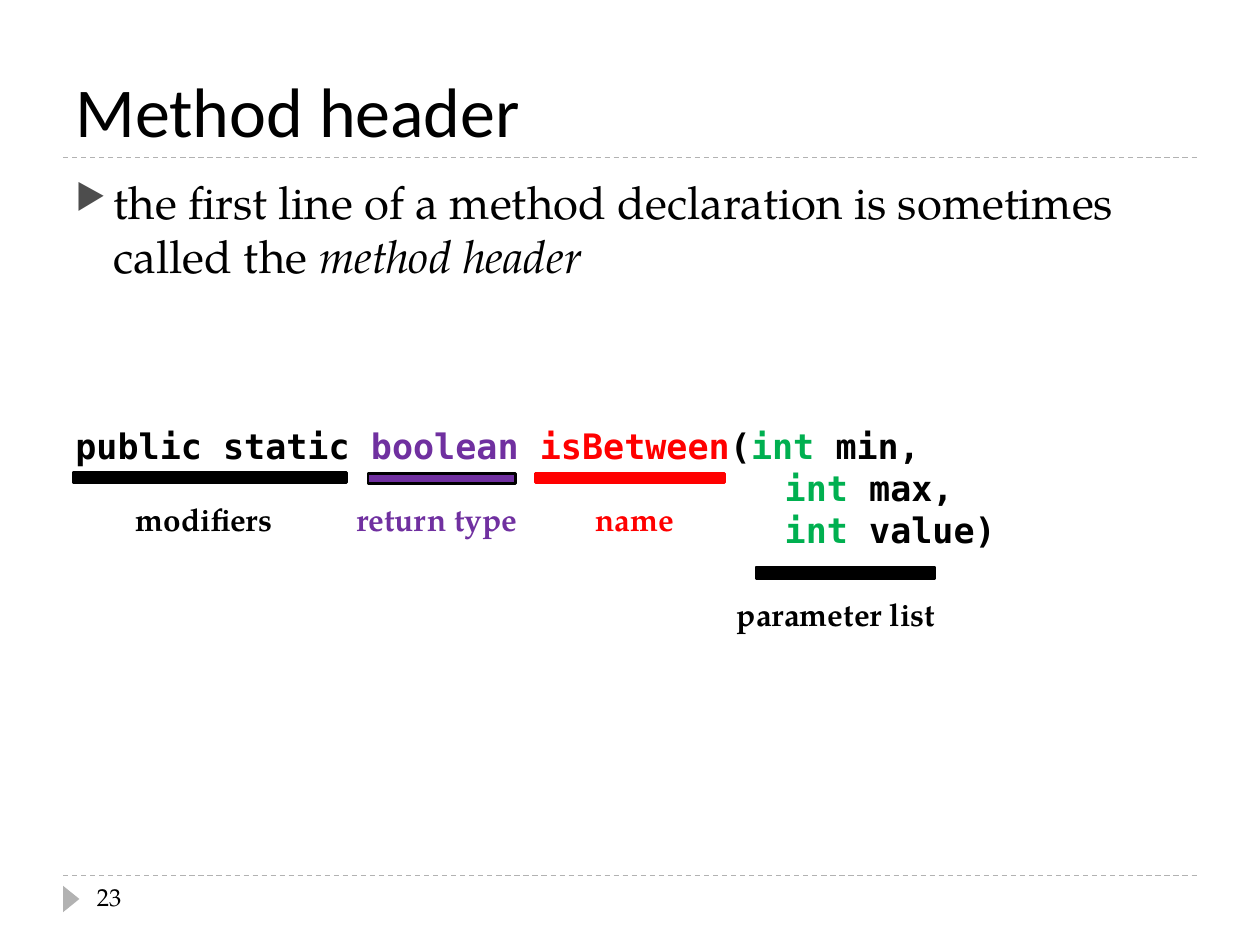
from dataclasses import dataclass

from lxml import etree
from pptx import Presentation
from pptx.dml.color import RGBColor
from pptx.enum import dml, shapes, text
from pptx.oxml import ns
from pptx.util import Inches, Pt


@dataclass(frozen=True)
class Theme:
    heading: str = "Calibri"
    body: str = "TeX Gyre Pagella"
    code: str = "DejaVu Sans Mono"
    black: str = "000000"
    purple: str = "7030A0"
    red: str = "FF0000"
    green: str = "00B050"
    rule: str = "B2B2B2"
    bullet: str = "4D4D4D"
    title_size: int = 40
    body_size: int = 26
    code_size: int = 20
    label_size: int = 18
    number_size: int = 14


THEME = Theme()


def rgb(color):
    return RGBColor.from_string(color)


def set_font(font, name, size, color=THEME.black, bold=False):
    font.name, font.size, font.bold = name, Pt(size), bold
    font.color.rgb = rgb(color)


def add_text_frame(slide, box, wrap=True):
    frame = slide.shapes.add_textbox(*map(Inches, box)).text_frame
    frame.word_wrap = wrap
    return frame


def add_line_of_text(slide, box, words, *font, wrap=True, **font_options):
    frame = add_text_frame(slide, box, wrap)
    frame.text = words
    set_font(frame.paragraphs[0].font, *font, **font_options)
    return frame


def add_block(slide, box, fill, outline=None, kind=shapes.MSO_SHAPE.RECTANGLE):
    block = slide.shapes.add_shape(kind, *map(Inches, box))
    block.shadow.inherit = False
    block.fill.solid()
    block.fill.fore_color.rgb = rgb(fill)
    if outline:
        block.line.color.rgb = rgb(outline)
        block.line.width = Pt(1.5)
    else:
        block.line.fill.background()
    return block


def add_dashed_rule(slide, left, top, width):
    rule = slide.shapes.add_connector(
        shapes.MSO_CONNECTOR.STRAIGHT,
        Inches(left), Inches(top), Inches(left + width), Inches(top))
    rule.line.color.rgb = rgb(THEME.rule)
    rule.line.width = Pt(0.75)
    rule.line.dash_style = dml.MSO_LINE.DASH
    etree.SubElement(rule._element.spPr, ns.qn("a:effectLst"))


def add_title(slide, box, words):
    left, top, width, height = box
    frame = add_line_of_text(slide, box, words, THEME.heading, THEME.title_size)
    frame.vertical_anchor = text.MSO_ANCHOR.BOTTOM
    add_dashed_rule(slide, left, top + height, width)


def set_bullet(paragraph, indent):
    properties = paragraph._p.get_or_add_pPr()
    properties.set("marL", str(Inches(indent)))
    properties.set("indent", str(-Inches(indent)))
    color = etree.SubElement(properties, ns.qn("a:buClr"))
    etree.SubElement(color, ns.qn("a:srgbClr"), val=THEME.bullet)
    etree.SubElement(properties, ns.qn("a:buSzPct"), val="76000")
    etree.SubElement(properties, ns.qn("a:buChar"), char="▶")


def add_statement(slide, box, words, term):
    """Bulleted sentence that ends in an italic term."""
    paragraph = add_text_frame(slide, box).paragraphs[0]
    paragraph.space_before = Pt(6)
    set_font(paragraph.font, THEME.body, THEME.body_size)
    set_bullet(paragraph, 0.3)
    paragraph.add_run().text = words
    emphasis = paragraph.add_run()
    emphasis.text = term
    emphasis.font.italic = True


def add_code(slide, box, lines, hanging):
    """Lines of (words, colour) runs; all but the first are indented."""
    frame = add_text_frame(slide, box)
    for number, runs in enumerate(lines):
        paragraph = frame.add_paragraph() if number else frame.paragraphs[0]
        paragraph.line_spacing = Pt(24)
        set_font(paragraph.font, THEME.code, THEME.code_size, bold=True)
        if number:
            paragraph._p.get_or_add_pPr().set("marL", str(Inches(hanging)))
        for words, color in runs:
            run = paragraph.add_run()
            run.text = words
            run.font.color.rgb = rgb(color)


def add_header_part(slide, bar, label_box, name, color, outline):
    """Coloured bar under a piece of the code, with its name below."""
    add_block(slide, bar, color, outline)
    add_line_of_text(slide, label_box, name, THEME.body, THEME.label_size,
                     color, bold=True, wrap=False)


def add_footer(slide, box, number):
    left, top, width, height = box
    add_dashed_rule(slide, left, top, width)
    marker = add_block(slide, (left - 0.04, top + 0.12, 0.21, 0.13), THEME.rule,
                       kind=shapes.MSO_SHAPE.ISOSCELES_TRIANGLE)
    marker.rotation = 90
    add_line_of_text(slide, (left + 0.17, top, 2.17, height), number,
                     THEME.body, THEME.number_size)


def add_method_header_slide(deck):
    slide = deck.slides.add_slide(deck.slide_layouts[6])
    black, purple, red, green = THEME.black, THEME.purple, THEME.red, THEME.green

    add_title(slide, (0.5, 0.17, 9, 1.08), "Method header")
    add_statement(slide, (0.5, 1.33, 9, 1.1),
                  "the first line of a method declaration is sometimes called the ",
                  "method header")
    add_code(slide, (0.5, 3.32, 9, 1.1), [
        [("public static ", black), ("boolean ", purple), ("isBetween", red),
         ("(", black), ("int ", green), ("min,", black)],
        [("int ", green), ("max,", black)],
        [("int ", green), ("value)", black)],
    ], hanging=5.63)

    header_parts = [
        ((0.58, 3.75, 2.17, 0.08), (0.98, 3.92, 1.37, 0.4), "modifiers", black, black),
        ((2.92, 3.76, 1.17, 0.08), (2.73, 3.92, 1.54, 0.4), "return type", purple, black),
        ((4.25, 3.76, 1.5, 0.07), (4.63, 3.92, 0.87, 0.4), "name", red, red),
        ((6, 4.5, 1.42, 0.09), (5.75, 4.67, 1.88, 0.4), "parameter list", black, black),
    ]
    for part in header_parts:
        add_header_part(slide, *part)

    add_footer(slide, (0.5, 6.95, 9, 0.4), "23")


def main():
    deck = Presentation()
    deck.slide_width, deck.slide_height = Inches(10), Inches(7.5)
    add_method_header_slide(deck)
    deck.save("out.pptx")


if __name__ == "__main__":
    main()
